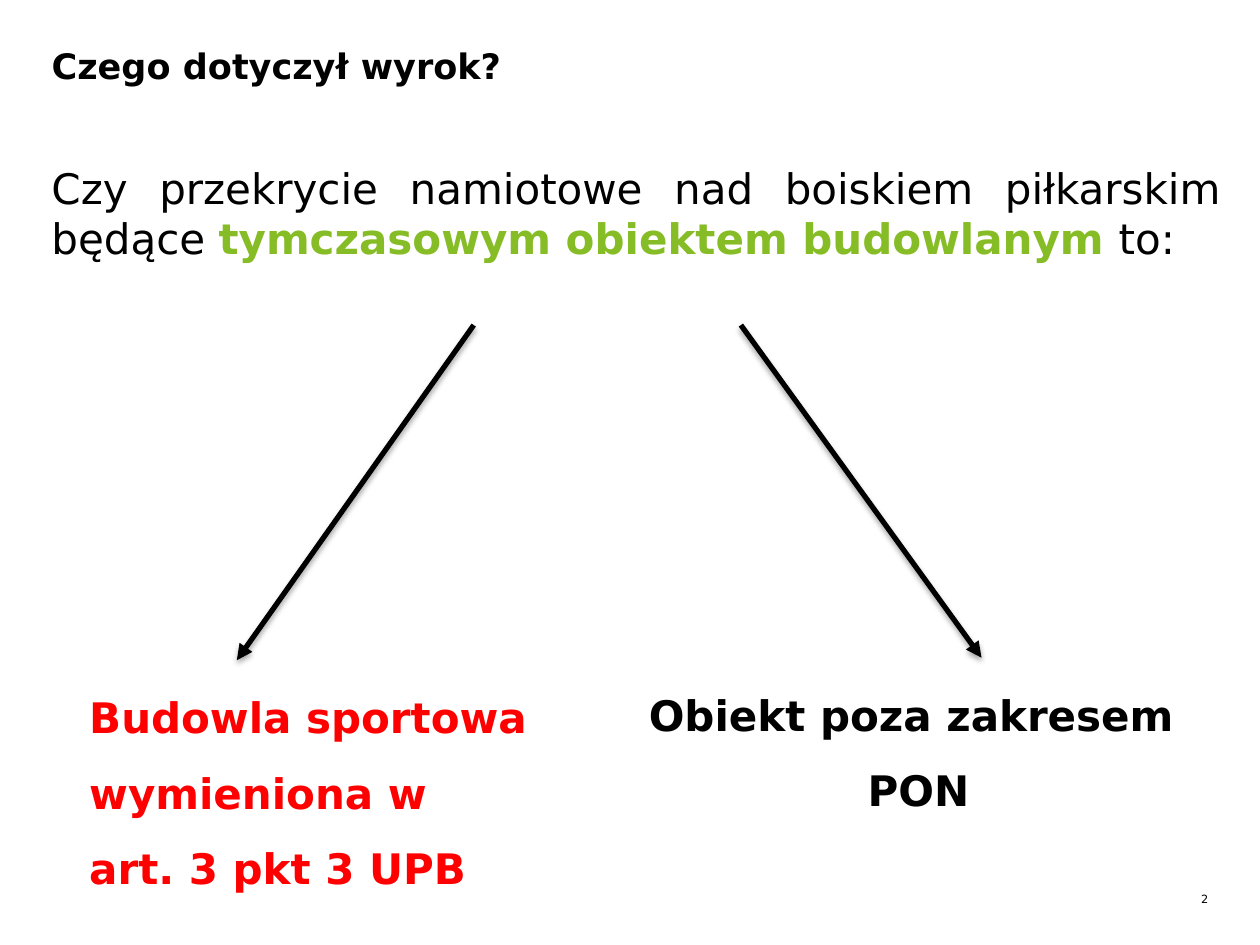
from dataclasses import dataclass

from lxml import etree
from pptx import Presentation
from pptx.dml.color import RGBColor
from pptx.enum.shapes import MSO_CONNECTOR
from pptx.enum.text import MSO_AUTO_SIZE, PP_ALIGN
from pptx.oxml.ns import qn
from pptx.slide import Slide
from pptx.util import Inches, Length, Pt

LEFT, RIGHT = PP_ALIGN.LEFT, PP_ALIGN.RIGHT
CENTER, JUSTIFY = PP_ALIGN.CENTER, PP_ALIGN.JUSTIFY
STRAIGHT = MSO_CONNECTOR.STRAIGHT
NO_AUTOFIT, GROW = MSO_AUTO_SIZE.NONE, MSO_AUTO_SIZE.SHAPE_TO_FIT_TEXT

BLACK = RGBColor(0x00, 0x00, 0x00)
GREEN = RGBColor(0x86, 0xBC, 0x25)
RED = RGBColor(0xFF, 0x00, 0x00)
FONT = "DejaVu Sans"

# The page is a grid of 100 columns by 75 rows
COLUMNS, ROWS = 100, 75
PAGE_WIDTH, PAGE_HEIGHT = Inches(10), Inches(7.5)

INSETS = ("margin_left", "margin_top", "margin_right", "margin_bottom")


@dataclass(frozen=True)
class Span:
    text: str
    color: RGBColor = BLACK
    bold: bool = False


@dataclass(frozen=True)
class TextBlock:
    column: float
    row: float
    columns: float
    rows: float
    paragraphs: tuple[tuple[Span, ...], ...]
    size: float = 24
    align: PP_ALIGN = JUSTIFY
    line_spacing: float = 1.0
    wrap: bool = True
    padded: bool = True


@dataclass(frozen=True)
class Arrow:
    start: tuple[float, float]
    end: tuple[float, float]


def across(columns: float) -> Length:
    return Length(round(PAGE_WIDTH * columns / COLUMNS))


def down(rows: float) -> Length:
    return Length(round(PAGE_HEIGHT * rows / ROWS))


def bold_lines(color: RGBColor, *lines: str) -> tuple[tuple[Span, ...], ...]:
    return tuple((Span(line, color, True),) for line in lines)


def draw_text(page: Slide, block: TextBlock) -> None:
    box = page.shapes.add_textbox(across(block.column), down(block.row),
                                  across(block.columns), down(block.rows))
    frame = box.text_frame
    frame.word_wrap = block.wrap
    frame.auto_size = GROW if block.padded else NO_AUTOFIT
    if not block.padded:
        for inset in INSETS:
            setattr(frame, inset, 0)
    for index, spans in enumerate(block.paragraphs):
        para = frame.add_paragraph() if index else frame.paragraphs[0]
        para.alignment = block.align
        para.line_spacing = block.line_spacing
        for span in spans:
            run = para.add_run()
            run.text = span.text
            run.font.color.rgb = span.color
            font_format = {"name": FONT, "size": Pt(block.size), "bold": span.bold}
            for name, value in font_format.items():
                setattr(run.font, name, value)


def draw_arrow(page: Slide, arrow: Arrow) -> None:
    """Draw a black arrow with a soft shadow straight below it."""
    (start_column, start_row), (end_column, end_row) = arrow.start, arrow.end
    connector = page.shapes.add_connector(STRAIGHT, across(start_column), down(start_row),
                                          across(end_column), down(end_row))
    connector.line.color.rgb = BLACK
    connector.line.width = Pt(3)
    etree.SubElement(connector.line._get_or_add_ln(), qn("a:tailEnd"), type="triangle")
    effects = etree.SubElement(connector._element.spPr, qn("a:effectLst"))
    shadow = etree.SubElement(effects, qn("a:outerShdw"), blurRad=str(Pt(3.1)),
                              dist=str(Pt(1.8)), dir="5400000", rotWithShape="0")
    color = etree.SubElement(shadow, qn("a:srgbClr"), val=str(BLACK))
    etree.SubElement(color, qn("a:alpha"), val="35000")


PAGE_NUMBER = TextBlock(93.4, 70.8, 2.5, 1.1, ((Span("2"),),),
                        size=6.5, align=RIGHT, padded=False)
TITLE = TextBlock(4.1, 3.5, 91.8, 3.7, bold_lines(BLACK, "Czego dotyczył wyrok?"),
                  size=20, align=LEFT, padded=False)
QUESTION = TextBlock(3.1, 12.4, 94.8, 9.1, ((
    Span("Czy przekrycie namiotowe nad boiskiem piłkarskim będące "),
    Span("tymczasowym obiektem budowlanym ", GREEN, True),
    Span("to:"),
),))
SPORTS_STRUCTURE = TextBlock(
    6.1, 52.4, 37.9, 25.2,
    bold_lines(RED, "Budowla sportowa ", "wymieniona w ", "art. 3 pkt 3 UPB"),
    line_spacing=1.5)
OUT_OF_SCOPE = TextBlock(
    50.4, 52.2, 45, 12.3, bold_lines(BLACK, "Obiekt poza zakresem ", "PON"),
    align=CENTER, line_spacing=1.5, wrap=False)

TEXT_BLOCKS = (PAGE_NUMBER, TITLE, QUESTION, SPORTS_STRUCTURE, OUT_OF_SCOPE)
ARROWS = (
    Arrow((37.6, 25.8), (18.8, 52.4)),
    Arrow((58.8, 25.8), (77.9, 52.2)),
)


def main() -> None:
    deck = Presentation()
    deck.slide_width, deck.slide_height = PAGE_WIDTH, PAGE_HEIGHT
    page = deck.slides.add_slide(deck.slide_layouts[6])
    for block in TEXT_BLOCKS:
        draw_text(page, block)
    for arrow in ARROWS:
        draw_arrow(page, arrow)
    deck.save("out.pptx")


if __name__ == "__main__":
    main()
